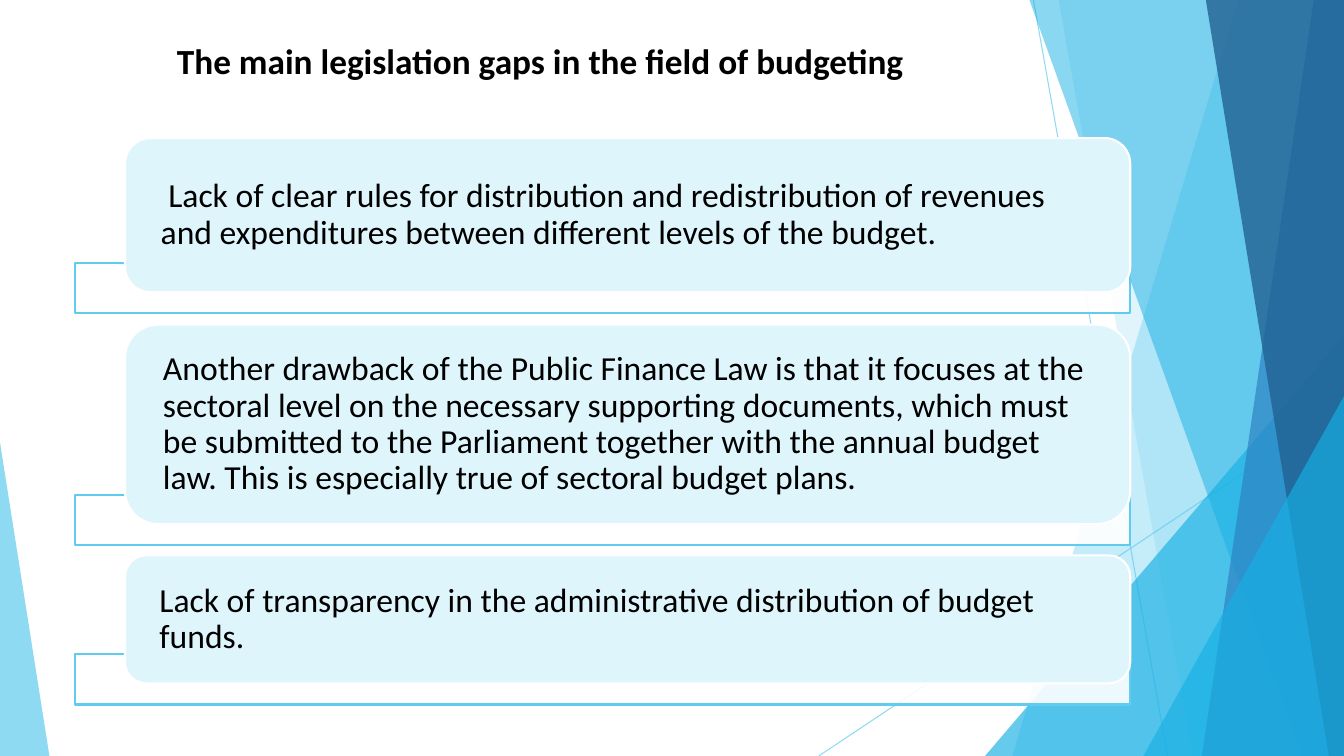
from lxml import etree
from pptx import Presentation
from pptx.dml.color import RGBColor
from pptx.enum.shapes import MSO_CONNECTOR, MSO_SHAPE
from pptx.enum.text import MSO_ANCHOR, PP_ALIGN
from pptx.oxml.ns import qn
from pptx.util import Inches, Pt

RECT, ROUND, TRIANGLE = MSO_SHAPE.RECTANGLE, MSO_SHAPE.ROUNDED_RECTANGLE, MSO_SHAPE.RIGHT_TRIANGLE
APEX_TRIANGLE = MSO_SHAPE.ISOSCELES_TRIANGLE
STRAIGHT = MSO_CONNECTOR.STRAIGHT
MIDDLE = MSO_ANCHOR.MIDDLE
LEFT, CENTER = PP_ALIGN.LEFT, PP_ALIGN.CENTER

WIDTH, HEIGHT = 13.33, 7.5
COLORS = {
    "sky": "5FCBEF", "cyan": "17B0E4", "blue": "2E83C3", "navy": "226292",
    "card": "DFF5FC", "white": "FFFFFF", "black": "000000",
}

RAYS = [((10.25, 0), (11.58, HEIGHT)), ((WIDTH, 4.03), (8.12, HEIGHT))]
BACK_BANDS = [(12.28, 10.04, "sky", 36), (10.5, 11.83, "sky", 20)]
FRONT_BANDS = [(10.21, 12.91, "cyan", 50), (13.03, 11.92, "blue", 70), (11.96, 13.18, "navy", 80)]

CARD_LEFT, CARD_WIDTH = 1.24, 9.97
BAR_LEFT, BAR_WIDTH, BAR_HEIGHT, BAR_OVERLAP = 0.74, 10.47, 0.5, 0.29
GAPS = [
    (1.37, 1.53, " Lack of clear rules for distribution and redistribution of revenues "
                 "and expenditures between different levels of the budget."),
    (3.22, 1.98, "Another drawback of the Public Finance Law is that it focuses at the "
                 "sectoral level on the necessary supporting documents, which must be "
                 "submitted to the Parliament together with the annual budget law. "
                 "This is especially true of sectoral budget plans."),
    (5.51, 1.27, "Lack of transparency in the administrative distribution of budget funds."),
]


class SlideBuilder:
    font = "Calibri"

    def __init__(self, slide):
        self.shapes = slide.shapes

    def paint(self, fill, color, alpha=100):
        fill.solid()
        fill.fore_color.rgb = RGBColor.from_string(COLORS[color])
        if alpha < 100:
            for rgb in fill._xPr.iter(qn("a:srgbClr")):
                etree.SubElement(rgb, qn("a:alpha")).set("val", str(alpha * 1000))

    def finish(self, s, color, alpha=100, line=None):
        s.shadow.inherit = False
        self.paint(s.fill, color, alpha)
        if line:
            self.paint(s.line.fill, line)
            s.line.width = Pt(1.5)
        else:
            s.line.fill.background()
        return s

    def shape(self, kind, box, color, alpha=100, line=None, adj=None):
        s = self.shapes.add_shape(kind, *map(Inches, box))
        if adj is not None:
            s.adjustments[0] = adj
        return self.finish(s, color, alpha, line)

    def band(self, top_x, bottom_x, color, alpha):
        points = [(top_x, 0), (WIDTH, 0), (WIDTH, HEIGHT), (bottom_x, HEIGHT)]
        start, *rest = [(Inches(x), Inches(y)) for x, y in points]
        outline = self.shapes.build_freeform(*start)
        outline.add_line_segments(rest, close=True)
        self.finish(outline.convert_to_shape(), color, alpha)

    def ray(self, start, end):
        s = self.shapes.add_connector(STRAIGHT, *map(Inches, start + end))
        self.paint(s.line.fill, "sky", 70)
        s.line.width = Pt(0.75)
        etree.SubElement(s._element.spPr, qn("a:effectLst"))

    def set_text(self, s, text, size, align, bold=False, spacing=1.0, frame=None):
        tf = s.text_frame
        p = tf.paragraphs[0]
        r = p.add_run()
        r.text = text
        formats = [
            (tf, {"word_wrap": True, "vertical_anchor": MIDDLE, **(frame or {})}),
            (p, {"alignment": align, "line_spacing": spacing}),
            (r.font, {"name": self.font, "size": Pt(size), "bold": bold}),
        ]
        for target, values in formats:
            for name, value in values.items():
                setattr(target, name, value)
        r.font.color.rgb = RGBColor.from_string(COLORS["black"])

    def title(self, box, text):
        s = self.shapes.add_textbox(*map(Inches, box))
        self.set_text(s, text, 25.2, CENTER, bold=True)

    def gap_card(self, top, height, text):
        bar_top = top + height - BAR_OVERLAP
        self.shape(RECT, (BAR_LEFT, bar_top, BAR_WIDTH, BAR_HEIGHT), "white", 90, "sky")
        card = self.shape(ROUND, (CARD_LEFT, top, CARD_WIDTH, height), "card", line="white")
        margins = {"margin_left": Inches(0.28), "margin_right": Inches(0.28),
                   "margin_top": 0, "margin_bottom": 0}
        self.set_text(card, text, 24, LEFT, spacing=0.9, frame=margins)


def main():
    prs = Presentation()
    prs.slide_width, prs.slide_height = Inches(WIDTH), Inches(HEIGHT)
    slide = SlideBuilder(prs.slides.add_slide(prs.slide_layouts[6]))

    for start, end in RAYS:
        slide.ray(start, end)
    for band in BACK_BANDS:
        slide.band(*band)
    slide.shape(APEX_TRIANGLE, (9.77, 3.33, 3.56, 4.17), "cyan", 66, adj=1)
    for band in FRONT_BANDS:
        slide.band(*band)
    slide.shape(APEX_TRIANGLE, (11.34, 3.93, 1.99, 3.57), "cyan", 66, adj=1)
    slide.shape(TRIANGLE, (0, 4.39, 0.49, 3.11), "sky", 70)

    for gap in GAPS:
        slide.gap_card(*gap)
    slide.title((0.66, 0.32, 9.4, 0.56), "The main legislation gaps in the field of budgeting")
    prs.save("out.pptx")


if __name__ == "__main__":
    main()
